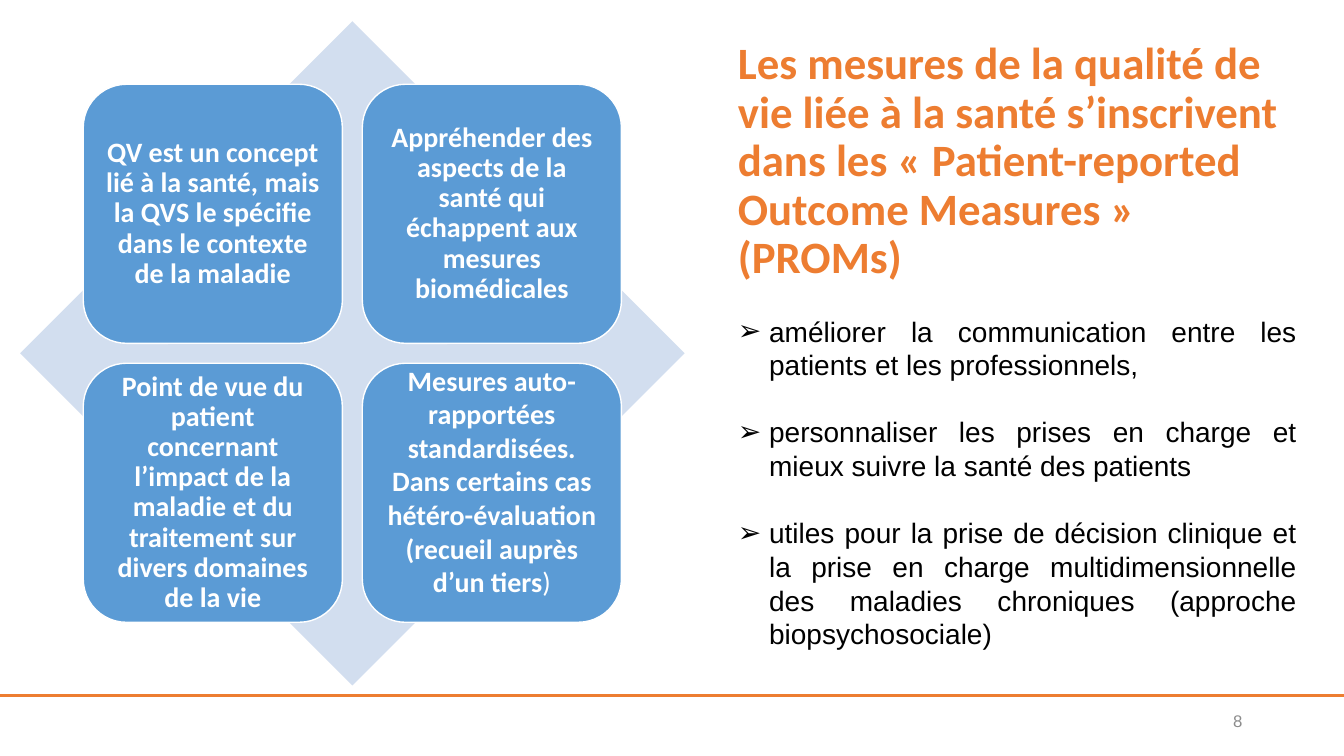
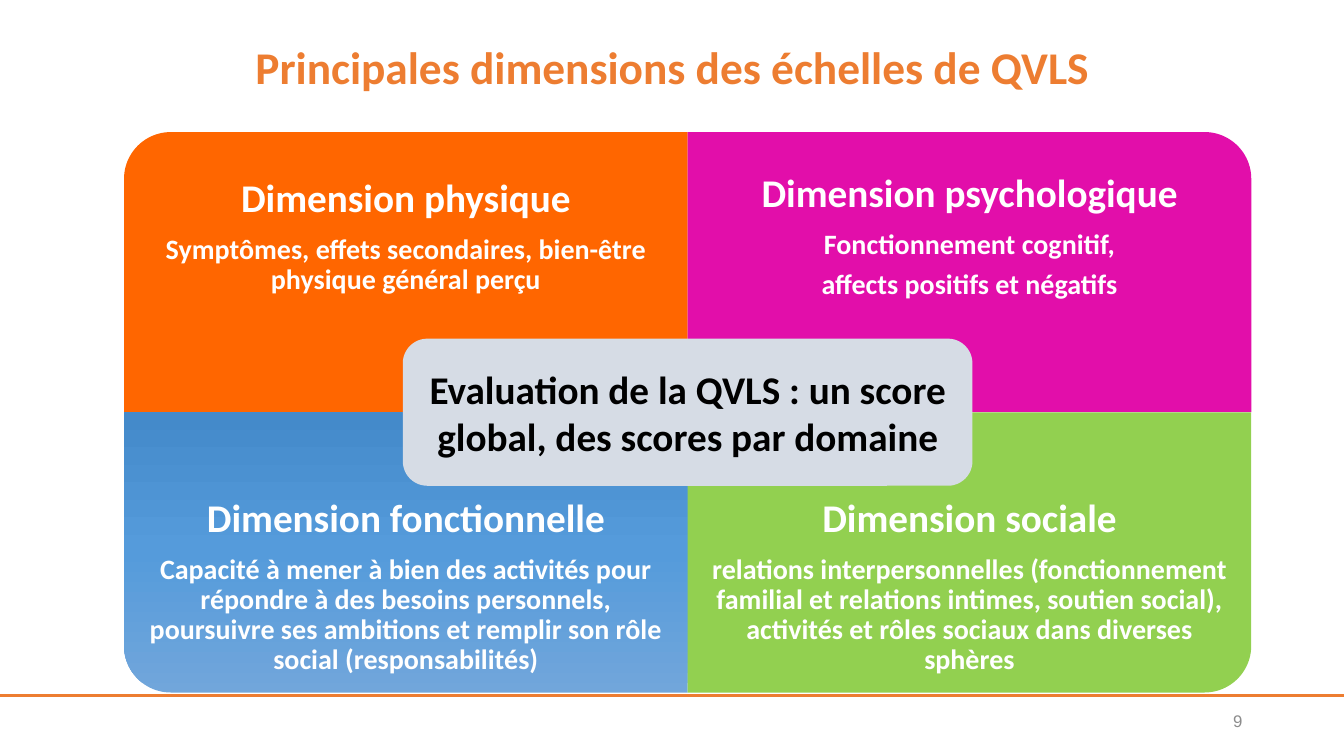
from copy import deepcopy
from dataclasses import dataclass

from lxml import etree
from pptx import Presentation
from pptx.dml.color import RGBColor
from pptx.enum.shapes import MSO_CONNECTOR, MSO_SHAPE
from pptx.enum.text import MSO_ANCHOR, PP_ALIGN
from pptx.oxml.ns import qn
from pptx.util import Inches, Pt


@dataclass(frozen=True)
class Theme:
    heading_font: str = "Calibri"
    body_font: str = "Arial"
    accent: str = "ED7D31"
    white: str = "FFFFFF"
    black: str = "000000"
    grey: str = "8C8C8C"
    tile: str = "5B9BD5"
    diamond: str = "D2DEEF"
    center: str = "D6DCE5"
    title_size: float = 32.4
    heading_size: float = 32
    dimension_size: float = 28
    text_size: float = 20
    number_size: float = 12
    tight: float = 0.9
    after_share: float = 0.35


THEME = Theme()
SLIDE_WIDTH, SLIDE_HEIGHT = 13.33, 7.5

MEASURES_HEADING = (
    "Les mesures de la qualité de vie liée à la santé s’inscrivent dans les "
    "« Patient-reported Outcome Measures » (PROMs)"
)
MEASURES_BENEFITS = [
    "améliorer la communication entre les patients et les professionnels,",
    "personnaliser les prises en charge et mieux suivre la santé des patients",
    "utiles pour la prise de décision clinique et la prise en charge "
    "multidimensionnelle des maladies chroniques (approche biopsychosociale)",
]
CONCEPT_TILES = [
    "QV est un concept lié à la santé, mais la QVS le spécifie dans le contexte de la maladie",
    "Appréhender des aspects de la santé qui échappent aux mesures biomédicales",
    "Point de vue du patient concernant l’impact de la maladie et du traitement "
    "sur divers domaines de la vie",
]
REPORTING_TILE = [
    "Mesures auto-rapportées standardisées.",
    "Dans certains cas hétéro-évaluation (recueil auprès d’un tiers",
]

DIMENSIONS_TITLE = "Principales dimensions des échelles de QVLS"
DIMENSIONS_CENTER = "Evaluation de la QVLS : un score global, des scores par domaine"
# Row by row: heading, lines, fill (several colours make a gradient), rotation
DIMENSIONS = [
    ("Dimension physique",
     ["Symptômes, effets secondaires, bien-être physique général perçu"],
     ["FF6600"], 270),
    ("Dimension psychologique",
     ["Fonctionnement cognitif,", "affects positifs et négatifs"],
     ["E20EAA"], 0),
    ("Dimension fonctionnelle",
     ["Capacité à mener à bien des activités pour répondre à des besoins personnels, "
      "poursuivre ses ambitions et remplir son rôle social (responsabilités)"],
     ["71A6DB", "559BDB", "448ACA"], 180),
    ("Dimension sociale",
     ["relations interpersonnelles (fonctionnement familial et relations intimes, "
      "soutien social), activités et rôles sociaux dans diverses sphères"],
     ["92D050"], 90),
]


def color(value):
    return RGBColor.from_string(value)


def inches(*values):
    return [Inches(value) for value in values]


def set_frame(shape, inset=None, bottom=None, anchor=MSO_ANCHOR.MIDDLE):
    frame = shape.text_frame
    frame.word_wrap = True
    frame.vertical_anchor = anchor
    if inset is not None:
        frame.margin_left = frame.margin_right = frame.margin_top = Inches(inset)
        frame.margin_bottom = Inches(inset if bottom is None else bottom)
    return frame


def add_run(paragraph, text, size, ink, bold=True, font=THEME.heading_font):
    run = paragraph.add_run()
    run.text = text
    run.font.name = font
    run.font.size = Pt(size)
    run.font.bold = bold
    run.font.color.rgb = color(ink)


def add_paragraph(frame, align=PP_ALIGN.CENTER, spacing=None, after=0):
    first = frame.paragraphs[0]
    paragraph = frame.add_paragraph() if first.runs else first
    paragraph.alignment = align
    if spacing is not None:
        paragraph.line_spacing = spacing
    if after:
        paragraph.space_after = Pt(after)
    return paragraph


def add_tight_line(frame, text, size):
    paragraph = add_paragraph(frame, spacing=THEME.tight, after=size * THEME.after_share)
    add_run(paragraph, text, size, THEME.white)


def add_bullet(paragraph, indent):
    properties = paragraph._p.get_or_add_pPr()
    properties.set("marL", str(Inches(indent)))
    properties.set("indent", str(-Inches(indent)))
    etree.SubElement(properties, qn("a:buFont"), typeface=THEME.body_font)
    etree.SubElement(properties, qn("a:buChar"), char="➢")


def fill_shape(shape, colors):
    if len(colors) == 1:
        shape.fill.solid()
        shape.fill.fore_color.rgb = color(colors[0])
        return
    shape.fill.gradient()
    shape.fill.gradient_angle = 270
    stop_list = shape._element.spPr.find(".//" + qn("a:gsLst"))
    while len(stop_list) < len(colors):
        stop_list.append(deepcopy(stop_list[0]))
    for index, (stop, value) in enumerate(zip(shape.fill.gradient_stops, colors)):
        stop.color.rgb = color(value)
        stop.position = index / (len(colors) - 1)


def add_block(slide, preset, box, colors, outline=None):
    shape = slide.shapes.add_shape(preset, *inches(*box))
    shape.shadow.inherit = False
    fill_shape(shape, colors)
    if outline:
        shape.line.color.rgb = color(outline)
        shape.line.width = Pt(1)
    else:
        shape.line.fill.background()
    return shape


def add_base_slide(presentation, number):
    """Add a blank slide with the footer rule and its page number."""
    slide = presentation.slides.add_slide(presentation.slide_layouts[6])
    rule_top = 0.92 * SLIDE_HEIGHT
    rule = slide.shapes.add_connector(
        MSO_CONNECTOR.STRAIGHT, *inches(0, rule_top, SLIDE_WIDTH, rule_top))
    rule.line.color.rgb = color(THEME.accent)
    rule.line.width = Pt(2.25)
    etree.SubElement(rule._element.spPr, qn("a:effectLst"))
    frame = set_frame(slide.shapes.add_textbox(*inches(9.42, 6.95, 3, 0.4)))
    add_run(add_paragraph(frame, PP_ALIGN.RIGHT), str(number), THEME.number_size,
            THEME.grey, bold=False, font=THEME.body_font)
    return slide


def add_concept_matrix(slide, left=0.2, top=0.21, side=6.59):
    add_block(slide, MSO_SHAPE.DIAMOND, (left, top, side, side), [THEME.diamond])
    tile, offset, pitch = 0.39 * side, 0.095 * side, 0.42 * side
    for index in range(4):
        row, column = divmod(index, 2)
        box = (left + offset + column * pitch, top + offset + row * pitch, tile, tile)
        shape = add_block(slide, MSO_SHAPE.ROUNDED_RECTANGLE, box, [THEME.tile], THEME.white)
        if index < len(CONCEPT_TILES):
            add_tight_line(set_frame(shape, 0.08), CONCEPT_TILES[index], THEME.text_size)
            continue
        frame = set_frame(shape, 0.08, bottom=0.32)
        for text in REPORTING_TILE:
            paragraph = add_paragraph(frame)
            add_run(paragraph, text, THEME.text_size, THEME.white)
        add_run(paragraph, ")", THEME.text_size, THEME.white, bold=False)


def add_measures_text(slide):
    box = slide.shapes.add_textbox(*inches(7.22, 0.36, 5.74, 6.19))
    frame = set_frame(box, anchor=MSO_ANCHOR.TOP)
    heading = add_paragraph(frame, PP_ALIGN.LEFT, THEME.tight, after=22)
    add_run(heading, MEASURES_HEADING, THEME.heading_size, THEME.accent)
    line_height = 1.2 * THEME.text_size
    for text in MEASURES_BENEFITS:
        last = text == MEASURES_BENEFITS[-1]
        paragraph = add_paragraph(frame, PP_ALIGN.JUSTIFY, Pt(line_height),
                                  after=0 if last else line_height)
        add_bullet(paragraph, 0.31)
        add_run(paragraph, text, THEME.text_size, THEME.black, bold=False,
                font=THEME.body_font)


def add_dimension_grid(slide, left=1.23, top=1.31, width=5.59, height=2.78):
    text_height = 0.75 * height
    for index, (heading, lines, colors, rotation) in enumerate(DIMENSIONS):
        row, column = divmod(index, 2)
        x, y = left + column * width, top + row * height
        # A quarter turn swaps the sides around the centre of the cell
        across, down = (height, width) if rotation % 180 else (width, height)
        box = (x + (width - across) / 2, y + (height - down) / 2, across, down)
        add_block(slide, MSO_SHAPE.ROUND_1_RECTANGLE, box, colors).rotation = rotation
        text_top = y + row * (height - text_height)
        frame = set_frame(
            slide.shapes.add_textbox(*inches(x, text_top, width, text_height)), 0.22)
        add_tight_line(frame, heading, THEME.dimension_size)
        for line in lines:
            add_tight_line(frame, line, THEME.text_size)

    center_width, center_height = 5.65, 1.46
    center_box = (left + width - center_width / 2, top + height - center_height / 2,
                  center_width, center_height)
    shape = add_block(slide, MSO_SHAPE.ROUNDED_RECTANGLE, center_box, [THEME.center])
    add_run(add_paragraph(set_frame(shape, 0.12)), DIMENSIONS_CENTER,
            THEME.dimension_size, THEME.black)


def add_title(slide, text):
    frame = set_frame(slide.shapes.add_textbox(*inches(0.92, 0.4, 11.5, 0.59)))
    add_run(add_paragraph(frame, spacing=THEME.tight), text, THEME.title_size, THEME.accent)


def main():
    presentation = Presentation()
    presentation.slide_width, presentation.slide_height = inches(SLIDE_WIDTH, SLIDE_HEIGHT)

    measures = add_base_slide(presentation, 8)
    add_concept_matrix(measures)
    add_measures_text(measures)

    dimensions = add_base_slide(presentation, 9)
    add_title(dimensions, DIMENSIONS_TITLE)
    add_dimension_grid(dimensions)

    presentation.save("out.pptx")


if __name__ == "__main__":
    main()
